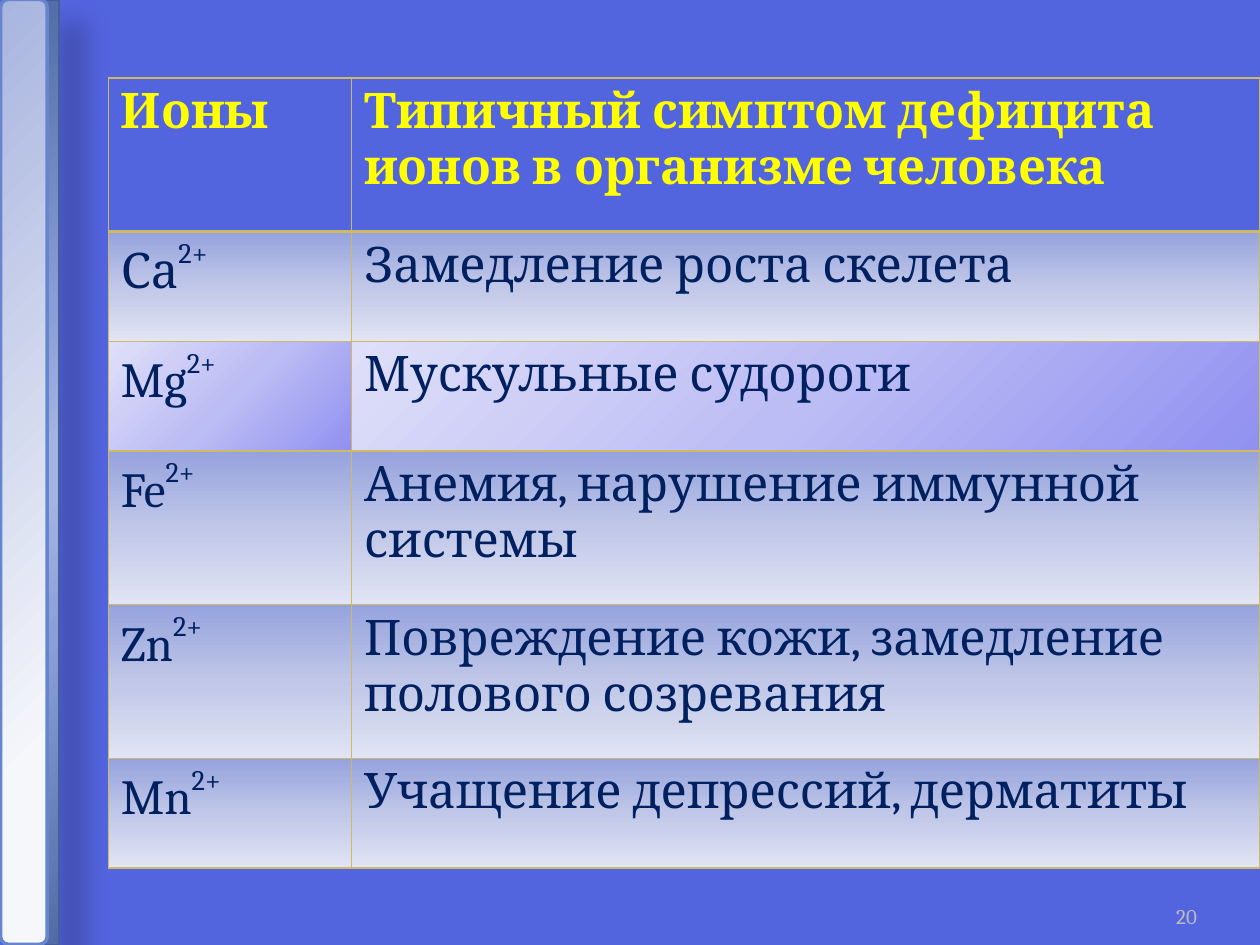
from pptx import Presentation
from pptx.dml.color import RGBColor
from pptx.enum.shapes import MSO_SHAPE
from pptx.enum.text import MSO_ANCHOR, PP_ALIGN
from pptx.oxml import parse_xml
from pptx.oxml.ns import nsdecls
from pptx.util import Inches, Pt

FONT = "Cambria"
COLORS = {"back": "5364DF", "head": "FFFF00", "text": "002060", "grid": "CEB966",
          "page": "BDBDBD", "edge": "465F9A", "rim": "6585CF", "shade": "000000"}
HEAD = ["Ионы", "Типичный симптом дефицита ионов в организме человека"]
ROWS = [
    ("Са", "Замедление роста скелета"),
    ("Mg", "Мускульные судороги"),
    ("Fe", "Анемия, нарушение иммунной системы"),
    ("Zn", "Повреждение кожи, замедление полового созревания"),
    ("Mn", "Учащение депрессий, дерматиты"),
]
CHARGE = "2+"
WIDTHS = [1.93, 7.21]
HEIGHTS = [1.22, 0.87, 0.87, 1.22, 1.22, 0.87]
BLUE = [(0, "96A3DD"), (50, "C0C7E8"), (100, "E0E4F3")]
VIOLET = [(0, "9191F1"), (50, "BDBDF5"), (100, "DFDFF9")]
STEEL = [(0, "516BA6"), (33, "899DD6"), (47, "A3B2E2"),
         (53, "A3B2E2"), (68, "8A9ED7"), (100, "516BA6")]
PEARL = [(20, "F6F7FB"), (100, "A8B5DF")]
CIRCLE = '<a:path path="circle"><a:fillToRect l="100000" t="100000"/></a:path>'


def color(name):
    return RGBColor.from_string(COLORS[name])


def linear(angle):
    return f'<a:lin ang="{angle * 60000}" scaled="0"/>'


def gradient(stops, course):
    marks = "".join(f'<a:gs pos="{pos * 1000}"><a:srgbClr val="{tint}"/></a:gs>'
                    for pos, tint in stops)
    return parse_xml(f'<a:gradFill {nsdecls("a")} rotWithShape="1">'
                     f'<a:gsLst>{marks}</a:gsLst>{course}</a:gradFill>')


def border(side, width):
    return parse_xml(f'<a:ln{side} {nsdecls("a")} w="{Pt(width)}"><a:solidFill>'
                     f'<a:srgbClr val="{COLORS["grid"]}"/></a:solidFill></a:ln{side}>')


def write(para, text, size, tint, bold=False, raised=False):
    run = para.add_run()
    run.text = text
    font = run.font
    font.name, font.size, font.bold = FONT, Pt(size), bold
    font.color.rgb = color(tint)
    if raised:
        run._r.get_or_add_rPr().set("baseline", "50000")


def bar(slide, kind, box, stops, course, rim, width):
    shape = slide.shapes.add_shape(kind, *map(Inches, box))
    shape.rotation = 270
    shape.shadow.inherit = False
    shape.line.color.rgb = color(rim)
    shape.line.width = Pt(width)
    shape._element.spPr.find("{*}prstGeom").addnext(gradient(stops, course))
    return shape


def main():
    deck = Presentation()
    deck.slide_width, deck.slide_height = Inches(10), Inches(7.5)
    slide = deck.slides.add_slide(deck.slide_layouts[6])
    slide.background.fill.solid()
    slide.background.fill.fore_color.rgb = color("back")

    strip = bar(slide, MSO_SHAPE.RECTANGLE, (-3.36, 3.67, 7.5, 0.16),
                STEEL, linear(139), "edge", 0.75)
    strip._element.spPr.find("{*}effectLst").append(parse_xml(
        f'<a:outerShdw {nsdecls("a")} blurRad="{Pt(15)}" dist="{Pt(18)}" dir="2700000" '
        f'algn="ctr" rotWithShape="0"><a:srgbClr val="{COLORS["shade"]}">'
        '<a:alpha val="26000"/></a:srgbClr></a:outerShdw>'))
    bar(slide, MSO_SHAPE.ROUNDED_RECTANGLE, (-3.56, 3.56, 7.5, 0.37),
        PEARL, CIRCLE, "rim", 2)

    page = slide.shapes.add_textbox(Inches(8.67), Inches(7.02), Inches(0.83), Inches(0.4))
    frame = page.text_frame
    frame.word_wrap = True
    frame.vertical_anchor = MSO_ANCHOR.BOTTOM
    frame.margin_left = frame.margin_right = 0
    frame.paragraphs[0].alignment = PP_ALIGN.RIGHT
    write(frame.paragraphs[0], "20", 12, "page")

    table = slide.shapes.add_table(
        len(HEIGHTS), len(WIDTHS), Inches(0.86), Inches(0.62),
        Inches(sum(WIDTHS)), Inches(sum(HEIGHTS))).table
    for col, width in zip(table.columns, WIDTHS):
        col.width = Inches(width)
    for row, height in zip(table.rows, HEIGHTS):
        row.height = Inches(height)
    for i, texts in enumerate([HEAD, *ROWS]):
        for j, text in enumerate(texts):
            cell = table.cell(i, j)
            para = cell.text_frame.paragraphs[0]
            top = i == 0
            write(para, text, 28, "head" if top else "text", bold=top)
            if not top and j == 0:
                write(para, CHARGE, 28, "text", raised=True)
            props = cell._tc.get_or_add_tcPr()
            for side in "LRTB":
                props.append(border(side, 2 if top and side == "B" else 1))
            if top:
                cell.fill.solid()
                cell.fill.fore_color.rgb = color("back")
            elif text in ROWS[1]:
                props.append(gradient(VIOLET, linear(225)))
            else:
                props.append(gradient(BLUE, linear(90)))

    deck.save("out.pptx")


if __name__ == "__main__":
    main()
